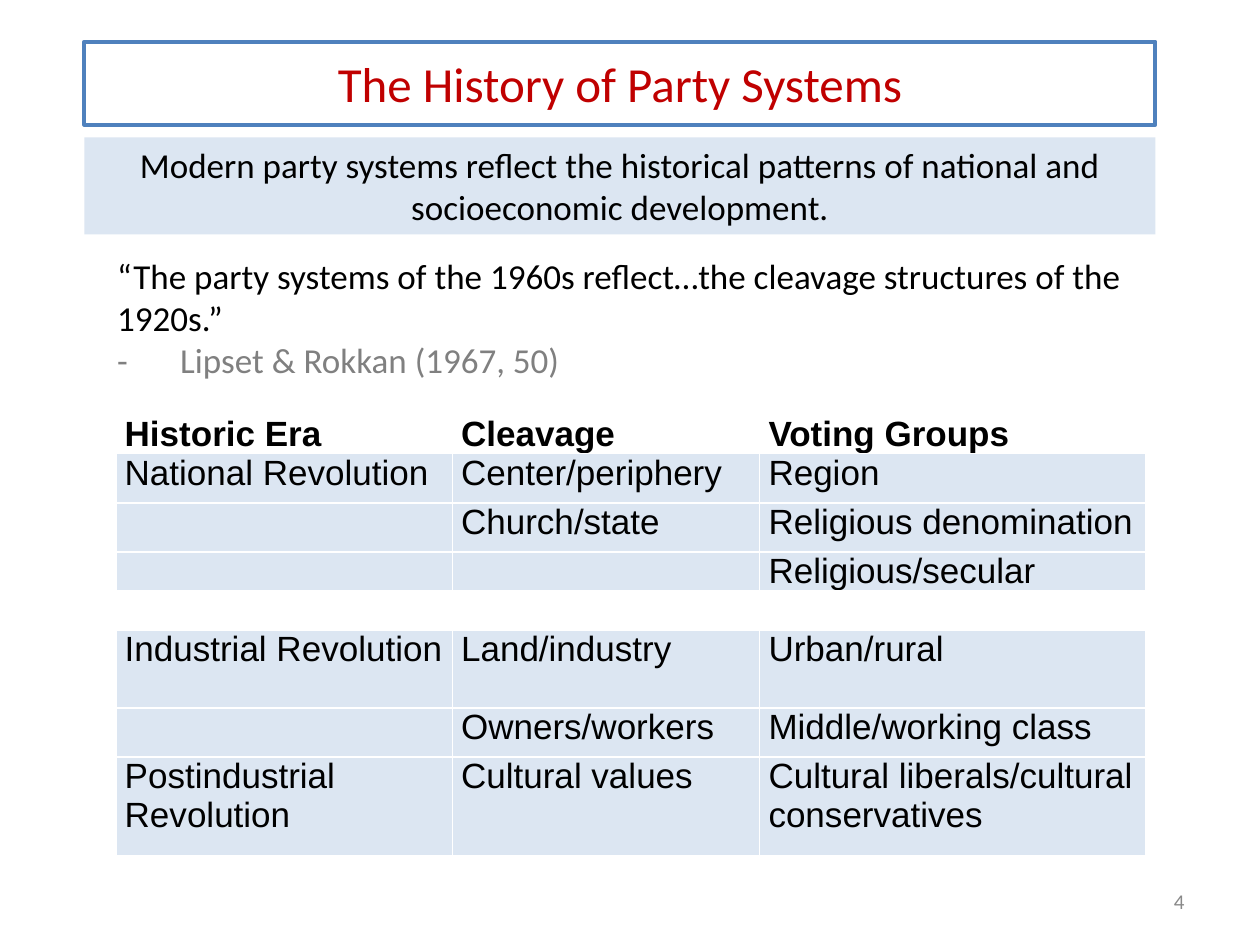
"""Build the slide on the history of party systems."""
from dataclasses import dataclass

import lxml.etree
import pptx
import pptx.dml.color
import pptx.enum.shapes
import pptx.enum.text
import pptx.oxml.ns
import pptx.util

Inches = pptx.util.Inches
Align = pptx.enum.text.PP_ALIGN
Anchor = pptx.enum.text.MSO_ANCHOR
AutoSize = pptx.enum.text.MSO_AUTO_SIZE
qn = pptx.oxml.ns.qn

COLORS = {
    "title": "C00000",
    "frame": "4F81BD",
    "band": "DCE6F2",
    "paper": "FFFFFF",
    "ink": "000000",
    "citation": "808080",
    "number": "898989",
}
COLUMN_WIDTHS = (2.67, 2.44, 3.06)


@dataclass(frozen=True)
class Box:
    left: float
    top: float
    width: float
    height: float

    def lengths(self):
        return [Inches(n) for n in (self.left, self.top, self.width, self.height)]


@dataclass(frozen=True)
class Row:
    height: float
    texts: tuple = ("", "", "")
    fill: str = "band"
    bold: bool = False
    merged: bool = False


ROWS = (
    Row(0.31, ("Historic Era", "Cleavage", "Voting Groups"), "paper", bold=True),
    Row(0.39, ("National Revolution", "Center/periphery", "Region")),
    Row(0.39, ("", "Church/state", "Religious denomination")),
    Row(0.31, ("", "", "Religious/secular")),
    Row(0.31, fill="paper", merged=True),
    Row(0.62, ("Industrial Revolution", "Land/industry", "Urban/rural")),
    Row(0.39, ("", "Owners/workers", "Middle/working class")),
    Row(0.78, ("Postindustrial\nRevolution", "Cultural values",
               "Cultural liberals/cultural conservatives")),
)


def rgb(name: str):
    return pptx.dml.color.RGBColor.from_string(COLORS[name])


def write(paragraph, text: str, *, size=20, font="Calibri", color="ink",
          bold=False, align=Align.LEFT) -> None:
    paragraph.alignment = align
    for index, line in enumerate(text.split("\n")):
        if index:
            paragraph.add_line_break()
        run = paragraph.add_run()
        run.text = line
        run.font.size = pptx.util.Pt(size)
        run.font.name = font
        run.font.bold = bold
        run.font.color.rgb = rgb(color)


def place(shape, box: Box) -> None:
    shape.left, shape.top, shape.width, shape.height = box.lengths()


def add_title(slide) -> None:
    title = slide.shapes.title
    place(title, Box(0.67, 0.33, 8.5, 0.66))
    title.line.color.rgb = rgb("frame")
    title.line.width = pptx.util.Pt(2.25)
    title.text_frame.vertical_anchor = Anchor.MIDDLE
    write(title.text_frame.paragraphs[0], "The History of Party Systems",
          size=28, color="title", align=Align.CENTER)


def add_quote(slide) -> None:
    quote = slide.placeholders[1]
    place(quote, Box(0.83, 1.97, 8.33, 1.15))
    frame = quote.text_frame
    frame.auto_size = AutoSize.NONE
    frame.vertical_anchor = Anchor.TOP
    passage, citation = frame.paragraphs[0], frame.add_paragraph()
    for paragraph in (passage, citation):
        paragraph.space_before = paragraph.space_after = pptx.util.Pt(0)
    tabs = lxml.etree.SubElement(citation._p.get_or_add_pPr(), qn("a:tabLst"))
    lxml.etree.SubElement(tabs, qn("a:tab"), pos=str(Inches(0.21)), algn="l")
    write(passage, "“The party systems of the 1960s reflect…"
                   "the cleavage structures of the 1920s.”")
    write(citation, "-\tLipset & Rokkan (1967, 50)", color="citation")


def add_borders(cell) -> None:
    properties = cell._tc.get_or_add_tcPr()
    for side in ("lnL", "lnR", "lnT", "lnB"):
        line = lxml.etree.SubElement(properties, qn(f"a:{side}"), w="12700")
        fill = lxml.etree.SubElement(line, qn("a:solidFill"))
        lxml.etree.SubElement(fill, qn("a:srgbClr"), val=COLORS["paper"])


def fill_cell(cell, text: str, row: Row) -> None:
    add_borders(cell)
    cell.fill.solid()
    cell.fill.fore_color.rgb = rgb(row.fill)
    cell.margin_left = cell.margin_right = Inches(0.07)
    cell.margin_top = cell.margin_bottom = 0
    if text:
        write(cell.text_frame.paragraphs[0], text, font="Arial", bold=row.bold)


def add_cleavage_table(slide) -> None:
    box = Box(0.92, 3.29, sum(COLUMN_WIDTHS), sum(row.height for row in ROWS))
    table = slide.shapes.add_table(len(ROWS), len(COLUMN_WIDTHS), *box.lengths()).table
    table.first_row = table.horz_banding = False
    for column, width in zip(table.columns, COLUMN_WIDTHS):
        column.width = Inches(width)
    for index, row in enumerate(ROWS):
        table.rows[index].height = Inches(row.height)
        for column, text in enumerate(row.texts):
            fill_cell(table.cell(index, column), text, row)
        if row.merged:
            table.cell(index, 0).merge(table.cell(index, len(COLUMN_WIDTHS) - 1))


def add_slide_number(slide) -> None:
    number = slide.shapes.add_textbox(*Box(7.17, 6.95, 2.33, 0.4).lengths())
    number.text_frame.word_wrap = True
    number.text_frame.vertical_anchor = Anchor.MIDDLE
    write(number.text_frame.paragraphs[0], "4", size=12, color="number",
          align=Align.RIGHT)


def add_thesis(slide) -> None:
    thesis = slide.shapes.add_shape(pptx.enum.shapes.MSO_SHAPE.RECTANGLE,
                                    *Box(0.67, 1.09, 8.5, 0.77).lengths())
    thesis.shadow.inherit = False
    thesis.fill.solid()
    thesis.fill.fore_color.rgb = rgb("band")
    thesis.line.fill.background()
    frame = thesis.text_frame
    frame.word_wrap = True
    frame.auto_size = AutoSize.SHAPE_TO_FIT_TEXT
    frame.vertical_anchor = Anchor.TOP
    write(frame.paragraphs[0], "Modern party systems reflect the historical patterns "
          "of national and socioeconomic development.", align=Align.CENTER)


def main() -> None:
    deck = pptx.Presentation()
    deck.slide_width, deck.slide_height = Inches(10), Inches(7.5)
    slide = deck.slides.add_slide(deck.slide_layouts[0])
    add_title(slide)
    add_quote(slide)
    add_cleavage_table(slide)
    add_slide_number(slide)
    add_thesis(slide)
    deck.save("out.pptx")


if __name__ == "__main__":
    main()
